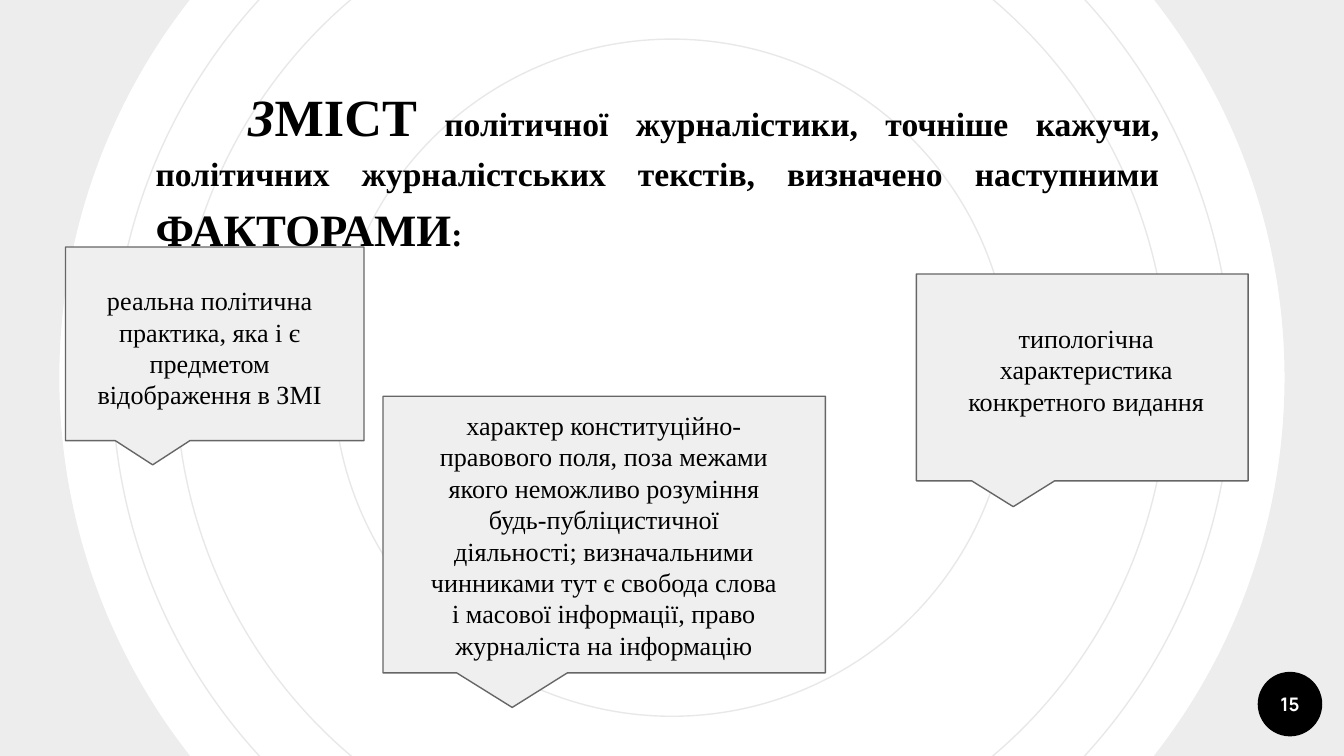
from lxml.etree import SubElement
from pptx import Presentation
from pptx.dml.color import RGBColor
from pptx.enum.shapes import MSO_SHAPE
from pptx.enum.text import MSO_ANCHOR, MSO_AUTO_SIZE, PP_ALIGN
from pptx.oxml.ns import qn
from pptx.util import Cm, Pt

COLOURS = {"ink": "000000", "ring": "E8E8E8", "paper": "FFFFFF",
           "callout": "EFEFEF", "outline": "666666"}
SERIF = "Times New Roman"
INSET = 0.25

CENTRE = (12.7, 7.14)
RING_DIAMETERS = [21.16, 18.75, 12.8]
RIM_DIAMETER = 29.31
BADGE = (23.77, 12.7, 1.22, 1.22)
PAGE_NUMBER = "15"

HEADING_BOX = (2.69, 1.17, 19.48, 1.22)
HEADING = [
    ("З", 28, True),
    ("МІСТ", 28, False),
    (" політичної журналістики, точніше кажучи, політичних журналістських "
     "текстів, визначено наступними ", 18, False),
    ("ФАКТОРАМИ", 24, False),
    (":", 18, False),
]

FACTORS = [
    ((1.24, 4.67, 5.64, 3.66), (1.45, 5.13, 5.03, 1.5),
     "реальна політична практика, яка і є предметом відображення в ЗМІ"),
    ((7.24, 7.49, 8.36, 5.23), (7.82, 7.49, 7.19, 3.28),
     "характер конституційно-правового поля, поза межами якого неможливо "
     "розуміння будь-публіцистичної діяльності; визначальними чинниками тут є "
     "свобода слова і масової інформації, право журналіста на інформацію"),
    ((17.32, 5.18, 6.27, 3.91), (17.81, 5.84, 5.44, 2.49),
     "типологічна характеристика конкретного видання"),
]


def colour(name):
    """Return the named palette colour."""
    return RGBColor.from_string(COLOURS[name])


def around_centre(diameter):
    """Return the square box of a circle on the common centre."""
    return CENTRE[0] - diameter / 2, CENTRE[1] - diameter / 2, diameter, diameter


def add_figure(slide, preset, box, fill=None, line=None):
    """Add a preset shape with an optional fill and outline."""
    figure = slide.shapes.add_shape(preset, *map(Cm, box))
    figure.shadow.inherit = False
    if fill:
        figure.fill.solid()
        figure.fill.fore_color.rgb = colour(fill)
    else:
        figure.fill.background()
    if line:
        figure.line.color.rgb = colour(line)
        figure.line.width = Pt(0.75)
    else:
        figure.line.fill.background()
    return figure


def set_frame(frame, anchor=MSO_ANCHOR.TOP):
    """Give a text frame even insets, wrapping and an anchor."""
    frame.margin_left = frame.margin_right = Cm(INSET)
    frame.margin_top = frame.margin_bottom = Cm(INSET)
    frame.word_wrap = True
    frame.auto_size = MSO_AUTO_SIZE.NONE
    frame.vertical_anchor = anchor


def set_font(font, name, size, ink, bold=False, italic=False):
    """Set the face, size, colour and style of a font."""
    font.name, font.size = name, Pt(size)
    font.bold, font.italic = bold, italic
    font.color.rgb = colour(ink)


def add_backdrop(slide):
    """Draw the rings, the translucent rim and the page badge."""
    for diameter in RING_DIAMETERS:
        add_figure(slide, MSO_SHAPE.OVAL, around_centre(diameter), line="ring")
    rim = add_figure(slide, MSO_SHAPE.DONUT, around_centre(RIM_DIAMETER), "ink")
    rim.adjustments[0] = 0.105
    rim_colour = next(rim._element.spPr.iter(qn("a:srgbClr")))
    SubElement(rim_colour, qn("a:alpha"), val="7000")

    badge = add_figure(slide, MSO_SHAPE.OVAL, BADGE, "ink")
    set_frame(badge.text_frame, MSO_ANCHOR.MIDDLE)
    badge.text_frame.margin_left = badge.text_frame.margin_right = 0
    number = badge.text_frame.paragraphs[0]
    number.text = PAGE_NUMBER
    number.alignment = PP_ALIGN.CENTER
    set_font(number.font, "Manrope", 10, "paper", bold=True)


def add_heading(slide):
    """Place and write the justified title above the backdrop."""
    title = slide.shapes.title
    slide.shapes._spTree.append(title._element)
    title.left, title.top, title.width, title.height = map(Cm, HEADING_BOX)
    set_frame(title.text_frame)
    heading = title.text_frame.paragraphs[0]
    heading.alignment = PP_ALIGN.JUSTIFY
    heading.line_spacing = 1.15
    properties = heading._p.get_or_add_pPr()
    properties.set("marL", "0")
    properties.set("indent", str(Cm(1.75)))
    for words, size, italic in HEADING:
        run = heading.add_run()
        run.text = words
        set_font(run.font, SERIF, size, "ink", bold=True, italic=italic)


def add_factors(slide):
    """Draw the callouts, then their texts."""
    for callout_box, _, _ in FACTORS:
        callout = add_figure(slide, MSO_SHAPE.ROUNDED_RECTANGULAR_CALLOUT,
                             callout_box, "callout", "outline")
        for index, value in enumerate((-0.208, 0.625, 0)):
            callout.adjustments[index] = value
    for _, text_box, words in FACTORS:
        frame = slide.shapes.add_textbox(*map(Cm, text_box)).text_frame
        set_frame(frame)
        factor = frame.paragraphs[0]
        factor.text = words
        factor.alignment = PP_ALIGN.CENTER
        set_font(factor.font, SERIF, 14, "ink")


def main():
    """Build and save the slide."""
    deck = Presentation()
    deck.slide_width, deck.slide_height = Cm(25.4), Cm(14.29)
    slide = deck.slides.add_slide(deck.slide_layouts[5])
    slide.background.fill.solid()
    slide.background.fill.fore_color.rgb = colour("paper")
    add_backdrop(slide)
    add_heading(slide)
    add_factors(slide)
    deck.save("out.pptx")


if __name__ == "__main__":
    main()
